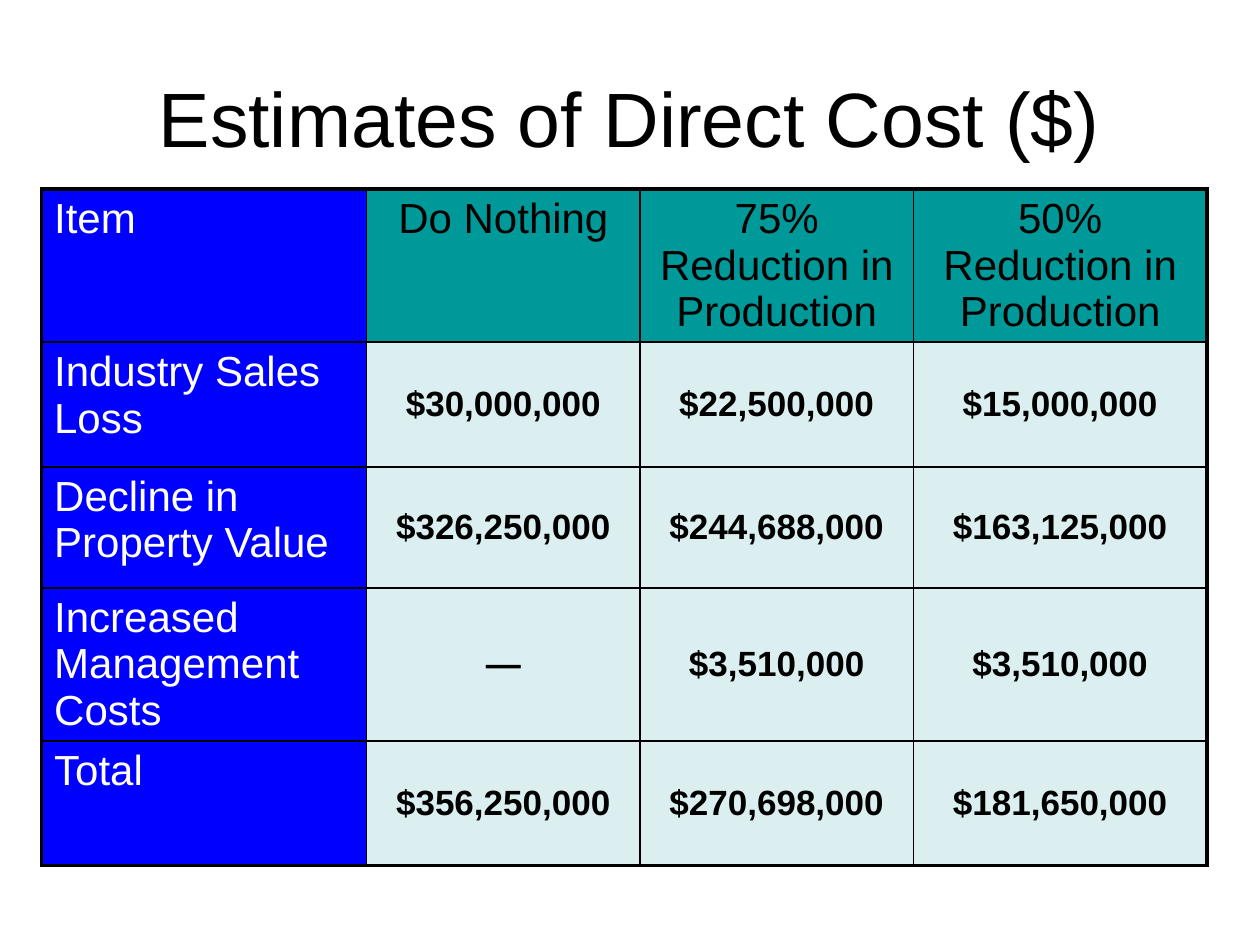
"""Build a slide with a table of direct cost estimates."""
from dataclasses import dataclass

from lxml import etree
from pptx import Presentation
from pptx.dml.color import RGBColor
from pptx.enum.text import MSO_ANCHOR, PP_ALIGN
from pptx.oxml.ns import qn
from pptx.util import Inches, Pt

LEFT, CENTER = PP_ALIGN.LEFT, PP_ALIGN.CENTER
TOP, MIDDLE = MSO_ANCHOR.TOP, MSO_ANCHOR.MIDDLE
TITLE_ONLY = 5


@dataclass(frozen=True)
class Theme:
    font: str = "Arial"
    ink: str = "000000"
    label_ink: str = "FFFFFF"
    label_fill: str = "0000FF"
    header_fill: str = "009999"
    amount_fill: str = "BBE0E3"
    amount_opacity: int = 50
    title_size: int = 44
    label_size: int = 24
    amount_size: int = 20
    outer_line: float = 2.25
    inner_line: float = 1


def style_font(paragraph, size, color, bold=False):
    font = paragraph.font
    font.name, font.size, font.bold = theme.font, Pt(size), bold
    font.color.rgb = RGBColor.from_string(color)


def add_border(properties, side, width):
    line = etree.SubElement(properties, qn(f"a:ln{side}"), w=str(Pt(width)))
    fill = etree.SubElement(line, qn("a:solidFill"))
    etree.SubElement(fill, qn("a:srgbClr"), val=theme.ink)


theme = Theme()
estimates = [
    ["Item", "Do Nothing", "75% Reduction in Production", "50% Reduction in Production"],
    ["Industry Sales Loss", "$30,000,000", "$22,500,000", "$15,000,000"],
    ["Decline in Property Value", "$326,250,000", "$244,688,000", "$163,125,000"],
    ["Increased Management Costs", "―", "$3,510,000", "$3,510,000"],
    ["Total", "$356,250,000", "$270,698,000", "$181,650,000"],
]
column_widths = [2.58, 2.17, 2.17, 2.33]
row_heights = [0.99, 0.99, 0.96, 0.99, 0.99]
last_row, last_column = len(row_heights) - 1, len(column_widths) - 1

deck = Presentation()
deck.slide_width, deck.slide_height = Inches(10), Inches(7.5)
slide = deck.slides.add_slide(deck.slide_layouts[TITLE_ONLY])

title = slide.shapes.title
title.left, title.top = Inches(0.5), Inches(0.3)
title.width, title.height = Inches(9), Inches(1.25)
title.text_frame.text = "Estimates of Direct Cost ($)"
title.text_frame.vertical_anchor = MIDDLE
heading = title.text_frame.paragraphs[0]
heading.alignment = CENTER
style_font(heading, theme.title_size, theme.ink)

costs = slide.shapes.add_table(
    len(row_heights), len(column_widths), Inches(0.33), Inches(1.5),
    Inches(sum(column_widths)), Inches(sum(row_heights)),
).table
costs.first_row = costs.horz_banding = False
for column, width in zip(costs.columns, column_widths):
    column.width = Inches(width)
for row, height in zip(costs.rows, row_heights):
    row.height = Inches(height)

for r, entries in enumerate(estimates):
    for c, entry in enumerate(entries):
        cell = costs.cell(r, c)
        cell.text = entry
        is_label, is_amount = c == 0, r > 0 and c > 0
        cell.vertical_anchor = MIDDLE if is_amount else TOP
        paragraph = cell.text_frame.paragraphs[0]
        paragraph.alignment = LEFT if is_label else CENTER
        style_font(
            paragraph,
            theme.amount_size if is_amount else theme.label_size,
            theme.label_ink if is_label else theme.ink,
            is_amount,
        )

        properties = cell._tc.get_or_add_tcPr()
        outer_sides = {"L": c == 0, "R": c == last_column, "T": r == 0, "B": r == last_row}
        for side, is_outer in outer_sides.items():
            add_border(properties, side, theme.outer_line if is_outer else theme.inner_line)

        if is_label:
            color = theme.label_fill
        else:
            color = theme.amount_fill if is_amount else theme.header_fill
        cell.fill.solid()
        cell.fill.fore_color.rgb = RGBColor.from_string(color)
        if is_amount:
            tint = properties.find(qn("a:solidFill")).find(qn("a:srgbClr"))
            etree.SubElement(tint, qn("a:alpha"), val=str(theme.amount_opacity * 1000))

deck.save("out.pptx")
